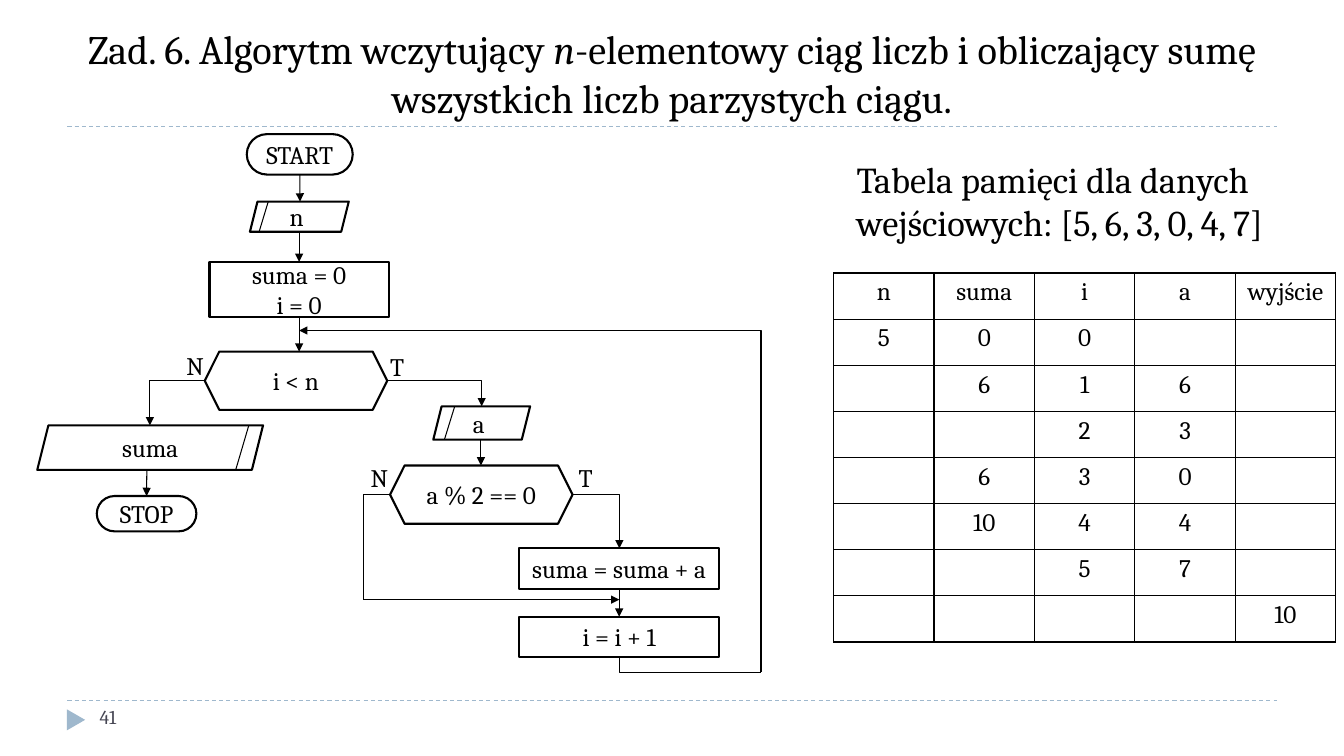
from lxml.etree import SubElement
from pptx import Presentation
from pptx.dml.color import RGBColor
from pptx.enum.dml import MSO_LINE
from pptx.enum.shapes import MSO_CONNECTOR, MSO_SHAPE
from pptx.enum.text import MSO_ANCHOR, PP_ALIGN
from pptx.oxml.ns import qn
from pptx.util import Cm, Pt

HUES = {"ink": "000000", "paper": "FFFFFF", "rule": "9FB8CD", "page": "464653"}
FONT = "Cambria"
ROWS = [
    ["n", "suma", "i", "a", "wyjście"],
    ["5", "0", "0", "", ""],
    ["", "6", "1", "6", ""],
    ["", "", "2", "3", ""],
    ["", "6", "3", "0", ""],
    ["", "10", "4", "4", ""],
    ["", "", "5", "7", ""],
    ["", "", "", "", "10"],
]


def hue(name):
    """Return the named colour."""
    return RGBColor.from_string(HUES[name])


def write(frame, runs, size=18, align=PP_ALIGN.CENTER, tone="ink"):
    """Add (text, italic) runs to the first paragraph, None being a line break."""
    para = frame.paragraphs[0]
    para.alignment = align
    for part in runs:
        if part is None:
            para.add_line_break()
            continue
        run = para.add_run()
        run.text, run.font.italic = part
        run.font.size = Pt(size)
        run.font.name = FONT
        run.font.color.rgb = hue(tone)


def label(slide, box, runs, size=18, align=PP_ALIGN.LEFT, tone="ink",
          anchor=MSO_ANCHOR.TOP):
    """Add a wrapped text box."""
    frame = slide.shapes.add_textbox(*map(Cm, box)).text_frame
    frame.word_wrap = True
    frame.vertical_anchor = anchor
    write(frame, runs, size, align, tone)


def wire(slide, start, end, kind=MSO_CONNECTOR.STRAIGHT, tone="ink", arrow=False):
    """Add a thin connector, with an arrowhead on request."""
    line = slide.shapes.add_connector(kind, *map(Cm, (*start, *end)))
    line.line.color.rgb = hue(tone)
    line.line.width = Pt(0.75)
    if arrow:
        SubElement(line.line._get_or_add_ln(), qn("a:tailEnd"), type="triangle")
    SubElement(line._element.spPr, qn("a:effectLst"))
    return line


def bend(slide, start, end, arrow=True, corners=1):
    """Add an elbow that turns once, or turns straight at its start."""
    line = wire(slide, start, end, MSO_CONNECTOR.ELBOW, arrow=arrow)
    geom = line._element.spPr.find(qn("a:prstGeom"))
    if corners == 1:
        geom.set("prst", "bentConnector2")
    else:
        guides = geom.find(qn("a:avLst"))
        SubElement(guides, qn("a:gd"), name="adj1", fmla="val 0")


def node(slide, kind, box, runs):
    """Add one outlined block of the flow chart."""
    block = slide.shapes.add_shape(kind, *map(Cm, box))
    block.shadow.inherit = False
    if kind == MSO_SHAPE.RECTANGLE:
        block.fill.solid()
        block.fill.fore_color.rgb = hue("paper")
    else:
        block.fill.background()
    if kind == MSO_SHAPE.ROUNDED_RECTANGLE:
        block.adjustments[0] = 0.5
    block.line.color.rgb = hue("ink")
    block.line.width = Pt(1.5)
    block.text_frame.word_wrap = True
    block.text_frame.vertical_anchor = MSO_ANCHOR.MIDDLE
    write(block.text_frame, runs)
    return block


def frame(slide, box):
    """Draw the dashed rules, the title and the page mark."""
    x, y, w, h = box
    for level in (y + 2.75, y + h):
        rule = wire(slide, (x, level), (x + w, level), tone="rule")
        rule.line.dash_style = MSO_LINE.DASH
    mark = slide.shapes.add_shape(MSO_SHAPE.ISOSCELES_TRIANGLE, Cm(x - 0.05),
                                  Cm(y + h + 0.26), Cm(0.53), Cm(0.46))
    mark.rotation = 90
    mark.shadow.inherit = False
    mark.fill.solid()
    mark.fill.fore_color.rgb = hue("rule")
    mark.line.fill.background()
    label(slide, (x, y, w, 2.75), [
        ("Zad. 6. Algorytm wczytujący ", False), ("n", True),
        ("-elementowy ciąg liczb i obliczający sumę wszystkich liczb "
         "parzystych ciągu.", False),
    ], 28.8, PP_ALIGN.CENTER, anchor=MSO_ANCHOR.BOTTOM)
    label(slide, (x + 0.56, y + h, 7.34, 1.02), [("41", False)], 14, tone="page")


def flow(slide, box):
    """Draw the flow chart from its top left corner."""
    left, top = box[:2]
    rect, pill = MSO_SHAPE.RECTANGLE, MSO_SHAPE.ROUNDED_RECTANGLE
    skew, hexa = MSO_SHAPE.PARALLELOGRAM, MSO_SHAPE.HEXAGON

    def at(x, y):
        return left + x, top + y

    parts = {}
    for name, kind, x, y, w, h, text in [
        ("start", pill, 5.28, 0, 2.67, 1.02, "START"),
        ("size", skew, 5.36, 1.7, 2.49, 0.76, "n "),
        ("init", rect, 4.34, 3.22, 4.52, 1.4, "suma = 0|i = 0"),
        ("loop", hexa, 4.22, 5.48, 4.6, 1.47, "i < n"),
        ("show", skew, 0, 7.34, 5.69, 1.12, "suma"),
        ("stop", pill, 1.5, 9.12, 2.51, 0.89, "STOP"),
        ("item", skew, 9.98, 6.86, 2.44, 0.84, "a "),
        ("even", hexa, 8.89, 8.35, 4.6, 1.47, "a % 2 == 0"),
        ("add", rect, 12.14, 10.44, 5.05, 1.02, "suma = suma + a"),
        ("next", rect, 12.14, 12.16, 5.05, 1.02, "i = i + 1"),
    ]:
        first, *rest = text.split("|")
        runs = [(first, False)]
        for more in rest:
            runs += [None, (more, False)]
        parts[name] = node(slide, kind, (*at(x, y), w, h), runs)

    for x, y, dx, dy in [(5.82, 1.7, 0.23, 0.76), (10.52, 6.86, 0.26, 0.84),
                         (5.33, 7.34, 0.33, 1.12)]:
        wire(slide, at(x, y), at(x - dx, y + dy))

    for x, y, low, head, foot in [
        (6.62, 1.02, 1.7, "start", None), (6.6, 2.46, 3.22, None, "init"),
        (6.6, 4.62, 5.48, "init", None), (11.18, 7.7, 8.35, None, None),
        (2.76, 8.46, 9.12, None, "stop"), (14.67, 11.46, 12.16, "add", "next"),
    ]:
        line = wire(slide, at(x, y), at(x, low), arrow=True)
        if head:
            line.begin_connect(parts[head], 2)
        if foot:
            line.end_connect(parts[foot], 0)

    for start, end in [((4.22, 6.2), (2.84, 7.34)), ((8.82, 6.2), (11.2, 6.86)),
                       ((13.49, 9.09), (14.67, 10.44))]:
        bend(slide, at(*start), at(*end))
    bend(slide, at(8.89, 9.09), at(8.23, 11.73), arrow=False)
    wire(slide, at(8.23, 11.73), at(14.67, 11.73), arrow=True)
    bend(slide, at(14.67, 13.18), at(18.24, 13.56), arrow=False, corners=2)
    bend(slide, at(18.24, 13.56), at(6.6, 4.95), corners=2)

    for x, y, text in [(8.64, 5.36, "T"), (3.51, 5.33, "N"),
                       (13.39, 8.15, "T"), (8.15, 8.15, "N")]:
        label(slide, (*at(x, y), 1.06, 1.02), [(text, False)])


def edge(cell):
    """Give a cell four thin borders."""
    props = cell._tc.get_or_add_tcPr()
    for place, side in enumerate(("lnL", "lnR", "lnT", "lnB")):
        line = SubElement(props, qn("a:" + side), w=str(Pt(1)))
        fill = SubElement(line, qn("a:solidFill"))
        SubElement(fill, qn("a:srgbClr"), val=HUES["ink"])
        props.insert(place, line)


def trace(slide, box):
    """Draw the memory table under its heading."""
    x, y, w, h = box
    label(slide, (x + 0.33, y, 11.99, 2.49), [
        ("Tabela pamięci dla danych wejściowych: [5, 6, 3, 0, 4, 7]", False)], 26)
    drop = 3.05
    grid = slide.shapes.add_table(len(ROWS), len(ROWS[0]), Cm(x), Cm(y + drop),
                                  Cm(w), Cm(h - drop)).table
    grid.first_row = grid.horz_banding = False
    for r, row in enumerate(ROWS):
        for c, text in enumerate(row):
            cell = grid.cell(r, c)
            cell.fill.background()
            edge(cell)
            if text:
                write(cell.text_frame, [(text, False)])


def main():
    """Build and save the slide."""
    deck = Presentation()
    deck.slide_width, deck.slide_height = Cm(33.87), Cm(19.05)
    slide = deck.slides.add_slide(deck.slide_layouts[6])
    frame(slide, (1.7, 0.43, 30.48, 17.22))
    flow(slide, (0.94, 3.38, 18.24, 13.56))
    trace(slide, (21.01, 3.83, 12.65, 12.35))
    deck.save("out.pptx")


if __name__ == "__main__":
    main()
